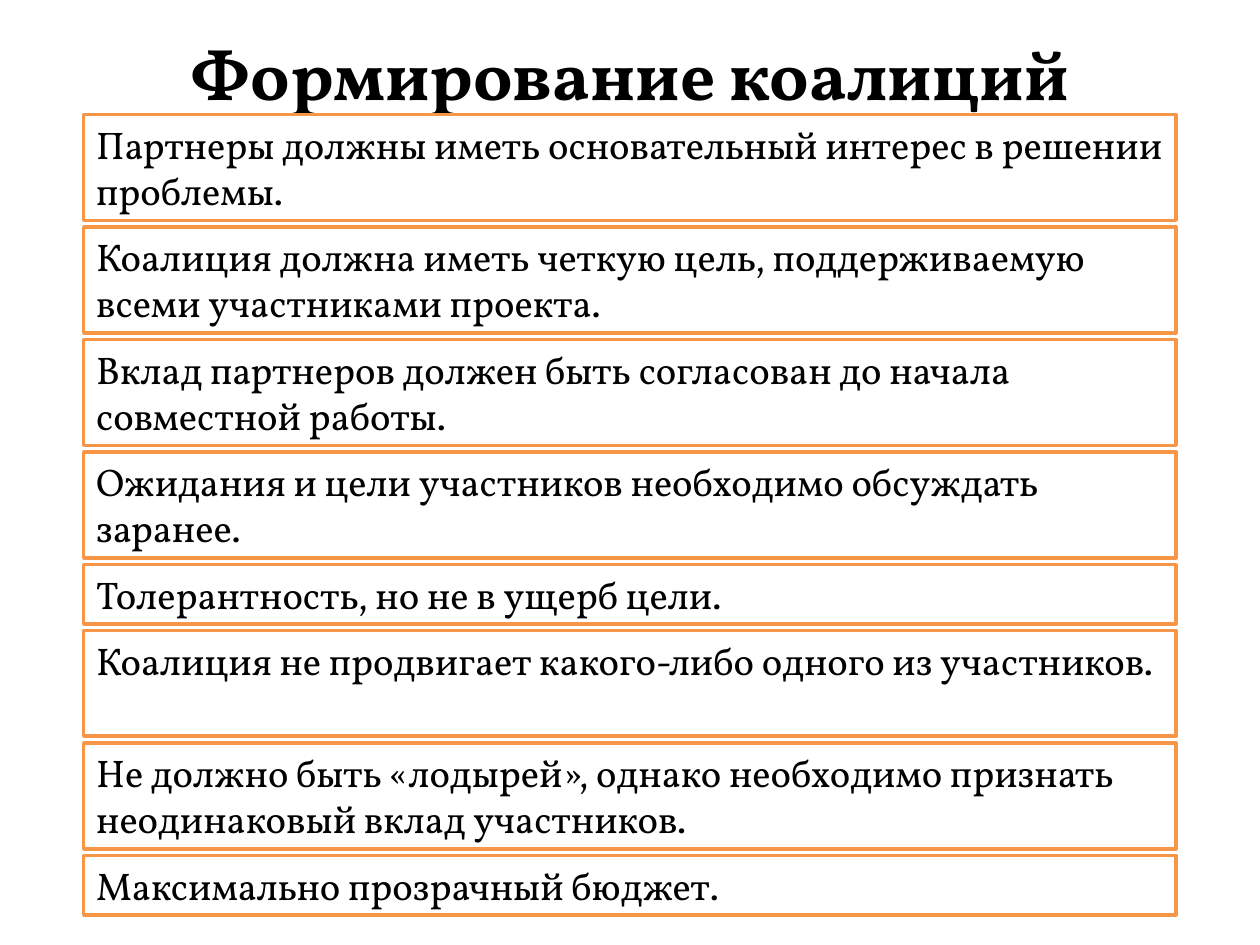
import dataclasses

import pptx
import pptx.dml.color
import pptx.enum.shapes
import pptx.enum.text
import pptx.util

BLACK = pptx.dml.color.RGBColor(0x00, 0x00, 0x00)
WHITE = pptx.dml.color.RGBColor(0xFF, 0xFF, 0xFF)
ORANGE = pptx.dml.color.RGBColor(0xF7, 0x96, 0x46)
WIDTH, HEIGHT = pptx.util.Inches(10), pptx.util.Inches(7.5)
MARGIN, TOP, BOTTOM = 0.0665, 0.1213, 0.968
LINE, PADDING = 0.0493, 0.0133
TITLE_FONT = {"name": "Vollkorn", "size": pptx.util.Pt(39.6), "bold": True}
RULE_FONT = {"name": "Vollkorn", "size": pptx.util.Pt(22), "bold": False}


@dataclasses.dataclass(frozen=True)
class Rule:
    """A coalition rule and the number of text rows its box holds."""

    text: str
    rows: int = 2

    @property
    def height(self) -> float:
        """Return the box height as a share of the slide height."""
        return self.rows * LINE + PADDING


RULES = [
    Rule("Партнеры должны иметь основательный интерес в решении проблемы."),
    Rule("Коалиция должна иметь четкую цель, поддерживаемую всеми участниками проекта."),
    Rule("Вклад партнеров должен быть согласован до начала совместной работы."),
    Rule("Ожидания и цели участников необходимо обсуждать заранее."),
    Rule("Толерантность, но не в ущерб цели.", rows=1),
    Rule("Коалиция не продвигает какого-либо одного из участников."),
    Rule("Не должно быть «лодырей», однако необходимо признать неодинаковый вклад участников."),
    Rule("Максимально прозрачный бюджет.", rows=1),
]


def area(x: float, y: float, w: float, h: float) -> tuple[int, int, int, int]:
    """Turn shares of the slide into a position and size."""
    return int(x * WIDTH), int(y * HEIGHT), int(w * WIDTH), int(h * HEIGHT)


def write(sp, text: str, font: dict, anchor, align) -> None:
    """Put one formatted paragraph into a shape."""
    tf = sp.text_frame
    tf.word_wrap = True
    tf.vertical_anchor = anchor
    p = tf.paragraphs[0]
    p.alignment = align
    r = p.add_run()
    r.text = text
    for name, value in font.items():
        setattr(r.font, name, value)
    r.font.color.rgb = BLACK


def draw_title(s, text: str) -> None:
    """Draw the centred slide title."""
    sp = s.shapes.add_textbox(*area(0.05, 0.04, 0.9, 0.075))
    write(sp, text, TITLE_FONT, pptx.enum.text.MSO_ANCHOR.MIDDLE, pptx.enum.text.PP_ALIGN.CENTER)


def draw_rule(s, rule: Rule, y: float) -> None:
    """Draw one outlined box with its rule."""
    sp = s.shapes.add_shape(
        pptx.enum.shapes.MSO_SHAPE.RECTANGLE, *area(MARGIN, y, 1 - 2 * MARGIN, rule.height)
    )
    sp.shadow.inherit = False
    sp.fill.solid()
    sp.fill.fore_color.rgb = WHITE
    sp.line.color.rgb = ORANGE
    sp.line.width = pptx.util.Pt(2)
    write(sp, rule.text, RULE_FONT, pptx.enum.text.MSO_ANCHOR.TOP, pptx.enum.text.PP_ALIGN.LEFT)


def main() -> None:
    """Build the slide and save it."""
    prs = pptx.Presentation()
    prs.slide_width, prs.slide_height = WIDTH, HEIGHT
    s = prs.slides.add_slide(prs.slide_layouts[6])
    draw_title(s, "Формирование коалиций")
    gap = (BOTTOM - TOP - sum(rule.height for rule in RULES)) / (len(RULES) - 1)
    y = TOP
    for rule in RULES:
        draw_rule(s, rule, y)
        y += rule.height + gap
    prs.save("out.pptx")


if __name__ == "__main__":
    main()
